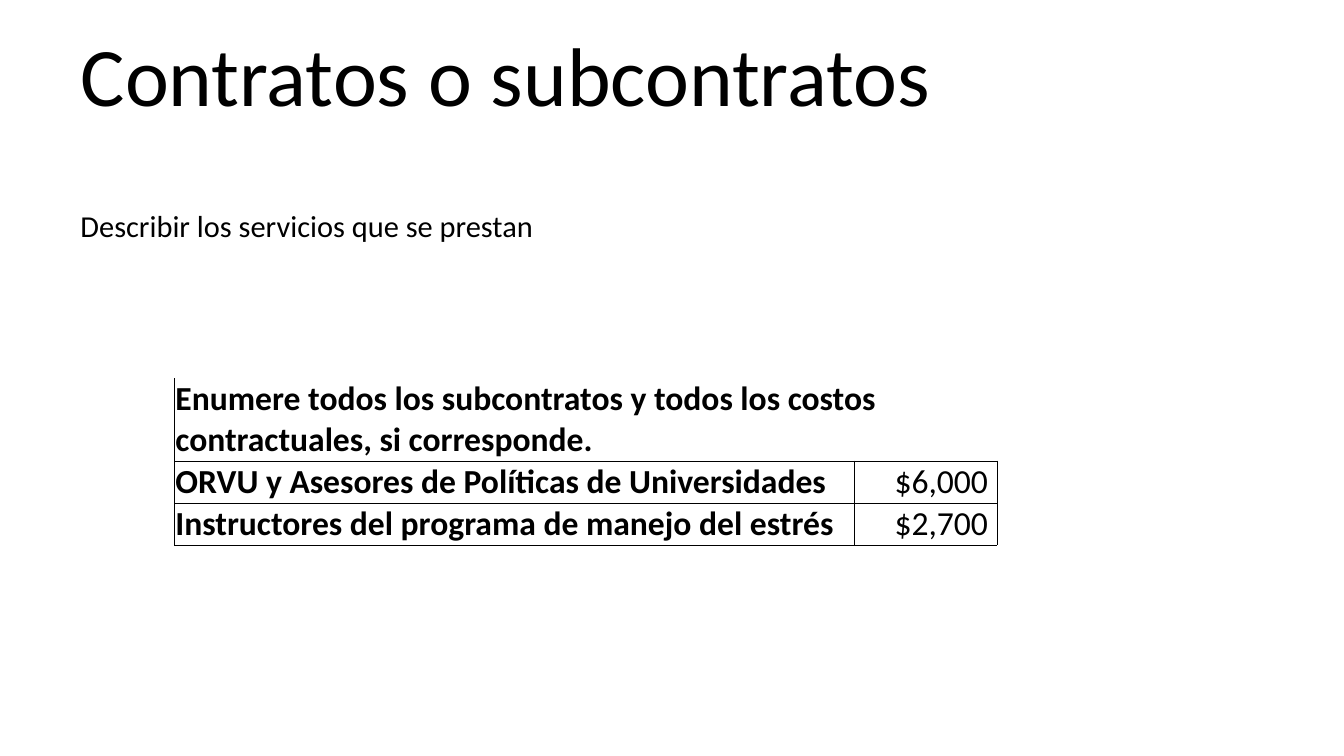
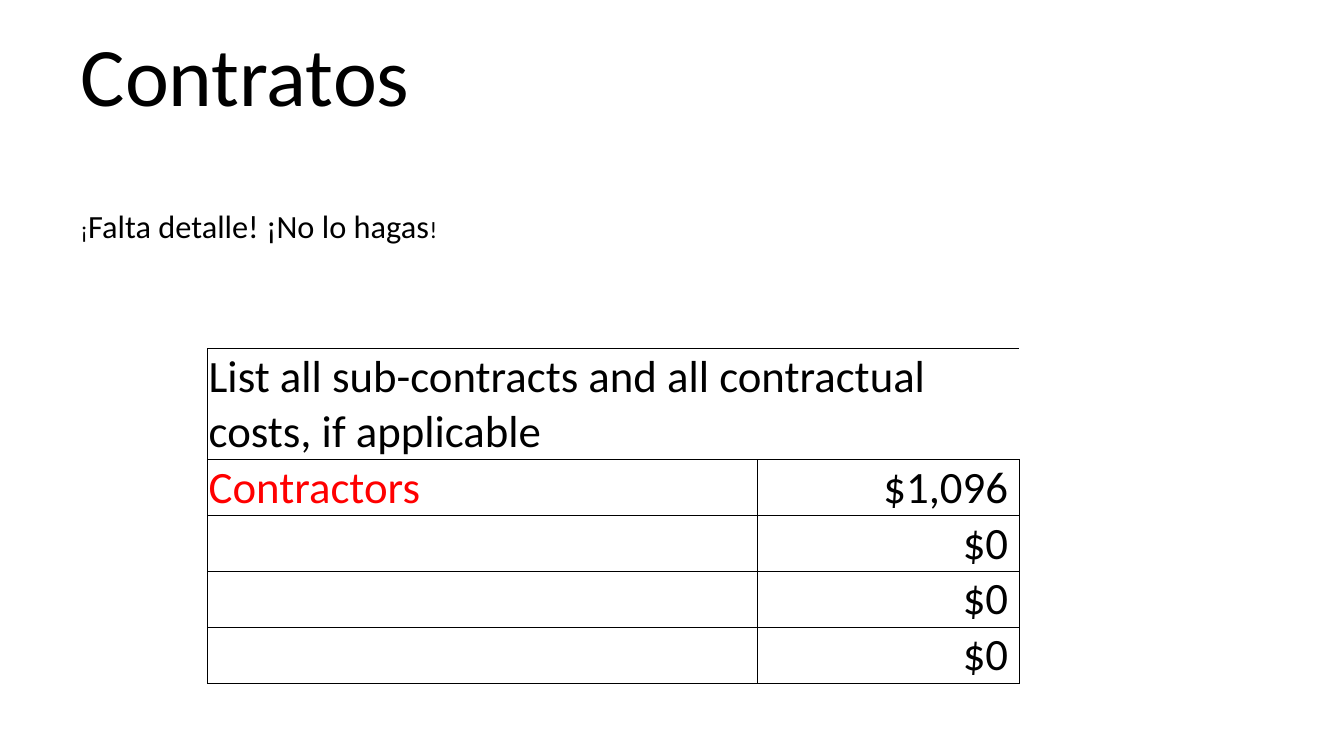
from lxml import etree
from pptx import Presentation, util as u
from pptx.dml.color import RGBColor
from pptx.enum import text
from pptx.oxml.ns import qn

PX = 9144  # 100 px to the inch
FONT = "Calibri"
HUES = {"ink": "000000", "alert": "FF0000"}
TITLE = (70, 10, 1193, 137)
NOTE = (70, 191, 1193, 75)
EDGES = "LRTB"


def px(*vals):
    return [u.Emu(val * PX) for val in vals]


def style(run, size, hue="ink", bold=False):
    font = run.font
    font.name, font.size, font.bold = FONT, u.Pt(size), bold
    font.color.rgb = RGBColor.from_string(HUES[hue])


def frame(shape, spacing):
    """Set the left, middle and line spacing rules of a one-line frame."""
    box = shape.text_frame
    box.word_wrap = True
    box.auto_size = text.MSO_AUTO_SIZE.NONE
    box.vertical_anchor = text.MSO_ANCHOR.MIDDLE
    para = box.paragraphs[0]
    para.alignment = text.PP_ALIGN.LEFT
    para.line_spacing = spacing
    return para


def add_slide(prs, title):
    slide = prs.slides.add_slide(prs.slide_layouts[5])
    head = slide.shapes.title
    head.left, head.top, head.width, head.height = px(*TITLE)
    head.text_frame.text = title
    style(frame(head, 0.9).runs[0], 59.4)
    return slide


def add_note(slide, parts):
    """Add the line under the title from (words, size) parts."""
    para = frame(slide.shapes.add_textbox(*px(*NOTE)), 0.7)
    for words, size in parts:
        run = para.add_run()
        run.text = words
        style(run, size)


def border(cell, shown):
    """Draw the shown edges of a cell and clear the others."""
    props = cell._tc.get_or_add_tcPr()
    for spot, edge in enumerate(EDGES):
        line = etree.Element(qn(f"a:ln{edge}"), w=str(u.Pt(0.5)))
        if edge in shown:
            fill = etree.SubElement(line, qn("a:solidFill"))
            etree.SubElement(fill, qn("a:srgbClr"), val=HUES["ink"])
        else:
            etree.SubElement(line, qn("a:noFill"))
        props.insert(spot, line)


def fill_cell(cell, words, size, hue="ink", bold=False, pad=None):
    """Write a cell; a right pad makes it a right-aligned amount."""
    cell.fill.background()
    cell.vertical_anchor = text.MSO_ANCHOR.BOTTOM
    cell.margin_left, cell.margin_right = px(1, pad or 1)
    cell.margin_top, cell.margin_bottom = px(1, 0)
    cell.text_frame.text = words
    para = cell.text_frame.paragraphs[0]
    para.alignment = text.PP_ALIGN.RIGHT if pad else text.PP_ALIGN.LEFT
    for run in para.runs:
        style(run, size, hue, bold)


def add_costs(slide, spot, cols, row, head, items, size, pad,
              bold=False, hue="ink", edges=EDGES):
    """Add a cost table with a two-line header across both columns."""
    rows = [2 * row] + [row] * len(items)
    shape = slide.shapes.add_table(len(rows), 2, *px(*spot, sum(cols), sum(rows)))
    table = shape.table
    table.first_row = table.horz_banding = False
    for col, width in zip(table.columns, px(*cols)):
        col.width = width
    for line, height in zip(table.rows, px(*rows)):
        line.height = height
    fill_cell(table.cell(0, 0), head, size, bold=bold)
    fill_cell(table.cell(0, 1), "", size)
    table.cell(0, 0).merge(table.cell(0, 1))
    for num, (name, cost) in enumerate(items, 1):
        fill_cell(table.cell(num, 0), name, size, hue, bold)
        fill_cell(table.cell(num, 1), cost, size, pad=pad)
    for num in range(len(rows)):
        for col in range(2):
            shown = EDGES if num else edges
            if num == 0:
                shown = shown.replace("L" if col else "R", "")
            border(table.cell(num, col), shown)


def main():
    prs = Presentation()
    prs.slide_width, prs.slide_height = px(1333, 750)

    slide = add_slide(prs, "Contratos o subcontratos")
    add_note(slide, [("Describir los servicios que se prestan", 21.7)])
    add_costs(slide, (173, 375), (674, 142), 41,
              "Enumere todos los subcontratos y todos los costos "
              "contractuales, si corresponde.",
              [("ORVU y Asesores de Políticas de Universidades", "$6,000"),
               ("Instructores del programa de manejo del estrés", "$2,700")],
              24, 9, bold=True, edges="LB")

    slide = add_slide(prs, "Contratos")
    add_note(slide, [("¡", 16.8), ("Falta detalle! ¡No lo hagas", 23.1), ("!", 16.8)])
    add_costs(slide, (206, 346), (545, 260), 55,
              "List all sub-contracts and all contractual costs, if applicable",
              [("Contractors", "$1,096")] + [("", "$0")] * 3,
              32, 11, hue="alert")

    prs.save("out.pptx")


if __name__ == "__main__":
    main()
